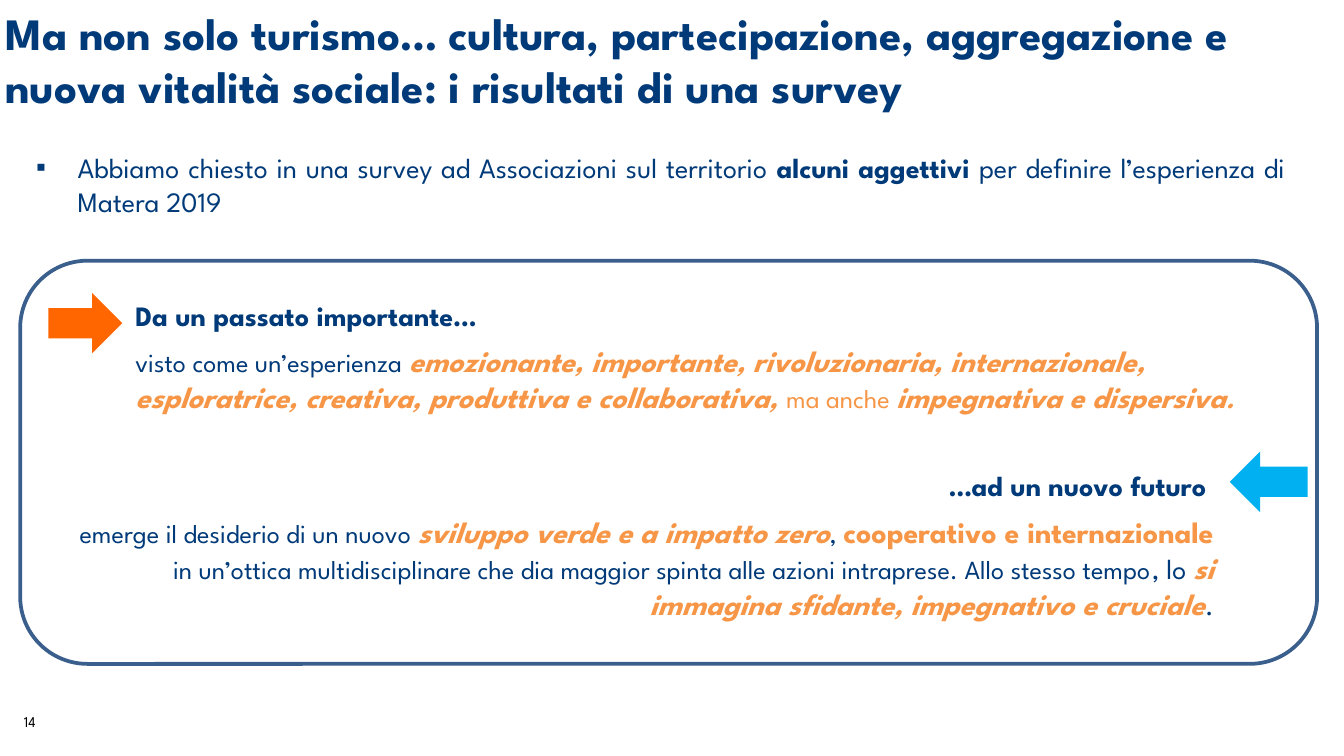
from lxml.etree import SubElement
from pptx import Presentation
from pptx.dml.color import RGBColor
from pptx.enum.shapes import MSO_SHAPE as SHAPE
from pptx.enum.text import MSO_ANCHOR as ANCHOR, PP_ALIGN as ALIGN
from pptx.oxml.ns import qn
from pptx.util import Inches, Pt

NAVY = RGBColor(0x00, 0x3A, 0x79)
PEACH = RGBColor(0xF7, 0x96, 0x46)
ORANGE = RGBColor(0xFF, 0x66, 0x00)
SKY = RGBColor(0x00, 0xB0, 0xF0)
STEEL = RGBColor(0x3A, 0x5F, 0x8C)
BLACK = RGBColor(0, 0, 0)

TITLE = dict(size=24, bold=True)
HEAD = dict(size=15, bold=True)
LEAD = dict(size=15)
BODY = dict(size=14)
NUMBER = dict(size=8, color=BLACK)
ASIDE = dict(size=14, color=PEACH)
STRONG = dict(size=16, bold=True, color=PEACH)
ACCENT = dict(STRONG, italic=True)
STOP = dict(ACCENT, size=14)


class SlideBuilder:
    """Holds the text style and the current slide."""

    font = "League Spartan"
    base = dict(bold=False, italic=False, color=NAVY)

    def __init__(self, prs):
        self.s = prs.slides.add_slide(prs.slide_layouts[6])

    def text(self, box, *paragraphs, aligns=(), anchor=ANCHOR.TOP, insets=(0.1, 0.05, 0.1, 0.05), bullet=None):
        tf = self.s.shapes.add_textbox(*map(Inches, box)).text_frame
        tf.word_wrap = True
        tf.vertical_anchor = anchor
        for side, inset in zip(("left", "top", "right", "bottom"), insets):
            setattr(tf, f"margin_{side}", Inches(inset))
        for i, runs in enumerate(paragraphs):
            p = tf.add_paragraph() if i else tf.paragraphs[0]
            if i:
                p.space_before = Pt(6)
            p.alignment = aligns[i] if aligns else ALIGN.LEFT
            if bullet:
                self.bullet(p, bullet)
            for words, style in runs:
                self.run(p, words, style)

    def bullet(self, p, char):
        pPr = p._p.get_or_add_pPr()
        pPr.set("marL", str(Inches(0.31)))
        pPr.set("indent", str(Inches(-0.31)))
        SubElement(pPr, qn("a:buFont")).set("typeface", "Arial")
        SubElement(pPr, qn("a:buChar")).set("char", char)

    def run(self, p, words, style):
        r = p.add_run()
        r.text = words
        r.font.name = self.font
        for key, value in {**self.base, **style}.items():
            if key == "color":
                r.font.color.rgb = value
            else:
                setattr(r.font, key, Pt(value) if key == "size" else value)

    def arrow(self, box, color, rotation=0):
        sp = self.s.shapes.add_shape(SHAPE.RIGHT_ARROW, *map(Inches, box))
        sp.shadow.inherit = False
        sp.rotation = rotation
        sp.fill.solid()
        sp.fill.fore_color.rgb = color
        sp.line.fill.background()

    def frame(self, box, color, width):
        sp = self.s.shapes.add_shape(SHAPE.ROUNDED_RECTANGLE, *map(Inches, box))
        sp.shadow.inherit = False
        sp.fill.background()
        sp.line.color.rgb = color
        sp.line.width = Pt(width)


def main():
    prs = Presentation()
    prs.slide_width = Inches(10)
    prs.slide_height = prs.slide_width * 9 // 16
    b = SlideBuilder(prs)
    b.text((0.01, 0.52, 9.99, 0.38),
           [("Ma non solo turismo… cultura, partecipazione, aggregazione e nuova vitalità sociale: "
             "i risultati di una survey", TITLE)],
           anchor=ANCHOR.BOTTOM, insets=(0.03, 0.03, 0.03, 0.06))
    b.text((0.17, 1.07, 9.49, 0.75),
           [("Abbiamo chiesto in una survey ad Associazioni sul territorio ", LEAD),
            ("alcuni aggettivi ", HEAD),
            ("per definire l’esperienza di Matera 2019", LEAD)],
           aligns=(ALIGN.JUSTIFY,), bullet="▪")
    b.text((0.08, 5.25, 0.45, 0.3), [("14", NUMBER)])
    b.text((0.91, 2.17, 8.74, 1.25),
           [("Da un passato importante…", HEAD)],
           [("visto come un’esperienza ", BODY),
            ("emozionante, importante, rivoluzionaria, internazionale, esploratrice, creativa, "
             "produttiva e collaborativa, ", ACCENT),
            ("ma anche ", ASIDE),
            ("impegnativa e dispersiva", ACCENT),
            (".", STOP)],
           aligns=(ALIGN.JUSTIFY, ALIGN.LEFT))
    b.arrow((0.36, 2.18, 0.55, 0.45), ORANGE)
    b.text((0.31, 3.44, 8.82, 1.18),
           [("…ad un nuovo futuro ", HEAD)],
           [("emerge il desiderio di un nuovo ", BODY),
            ("sviluppo verde e a impatto zero", ACCENT),
            (", ", BODY),
            ("cooperativo e internazionale ", STRONG),
            ("in un’ottica multidisciplinare che dia maggior spinta alle azioni intraprese. "
             "Allo stesso tempo", BODY),
            (", lo ", LEAD),
            ("si immagina sfidante, impegnativo e cruciale", ACCENT),
            (".", LEAD)],
           aligns=(ALIGN.RIGHT, ALIGN.RIGHT))
    b.arrow((9.15, 3.36, 0.58, 0.45), SKY, rotation=180)
    b.frame((0.15, 1.94, 9.65, 3), STEEL, 2)
    prs.save("out.pptx")


if __name__ == "__main__":
    main()
